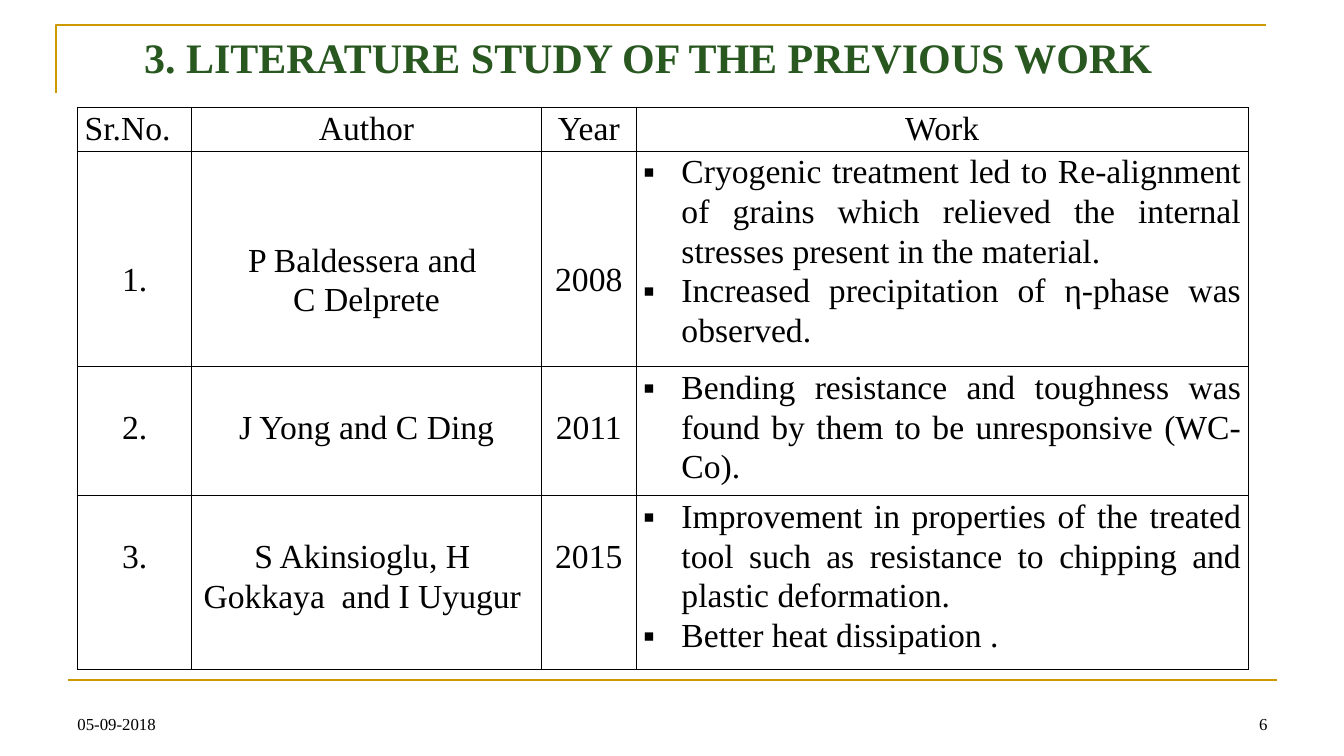
from dataclasses import dataclass

from lxml.etree import SubElement
from pptx import Presentation
from pptx.dml.color import RGBColor
from pptx.enum.shapes import MSO_CONNECTOR
from pptx.enum.text import MSO_ANCHOR, PP_ALIGN
from pptx.oxml.ns import qn
from pptx.util import Inches, Pt


@dataclass(frozen=True)
class Theme:
    font: str = "Times New Roman"
    ink: RGBColor = RGBColor(0, 0, 0)
    title: RGBColor = RGBColor(0x28, 0x57, 0x20)
    gold: RGBColor = RGBColor(0xCC, 0x99, 0x00)
    title_size: int = 30
    body_size: int = 24
    footer_size: int = 12
    rule: float = 1.5
    border: int = 1


THEME = Theme()
COLUMNS = [1.13, 3.47, 0.94, 6.07]
ROWS = [0.43, 2.14, 1.28, 1.72]
LINE_GAP = 0.4
HEADINGS = ["Sr.No.", "Author", "Year", "Work"]
STUDIES = [
    (["1."], ["P Baldessera and ", "C Delprete"], ["2008"], [
        "Cryogenic treatment led to Re-alignment of grains which relieved "
        "the internal stresses present in the material.",
        "Increased precipitation of η-phase was observed.",
    ]),
    (["2."], ["J Yong and C Ding"], ["2011"], [
        "Bending resistance and toughness was found by them to be "
        "unresponsive (WC-Co).",
    ]),
    (["3."], ["S Akinsioglu, H ", "Gokkaya  and I Uyugur "], ["2015"], [
        "Improvement in properties of the treated tool such as resistance "
        "to chipping and plastic deformation.",
        "Better heat dissipation .",
    ]),
]


def add_run(p, text, size, color=THEME.ink, bold=False):
    r = p.add_run()
    r.text = text
    r.font.name = THEME.font
    r.font.size = Pt(size)
    r.font.bold = bold
    r.font.color.rgb = color


def set_bullet(p):
    pPr = p._p.get_or_add_pPr()
    pPr.set("marL", str(Inches(0.38)))
    pPr.set("indent", str(-Inches(0.38)))
    SubElement(pPr, qn("a:buFont"), typeface=THEME.font)
    SubElement(pPr, qn("a:buChar"), char="▪")


def set_borders(cell):
    tcPr = cell._tc.get_or_add_tcPr()
    for side in ("lnL", "lnR", "lnT", "lnB"):
        ln = SubElement(tcPr, qn(f"a:{side}"), w=str(Pt(THEME.border)))
        fill = SubElement(ln, qn("a:solidFill"))
        SubElement(fill, qn("a:srgbClr"), val=str(THEME.ink))


def fill_cell(cell, lines, align, top=0, anchor=MSO_ANCHOR.TOP, bullets=False):
    set_borders(cell)
    cell.fill.background()
    cell.margin_left = cell.margin_right = Inches(0.07)
    cell.margin_top, cell.margin_bottom = Inches(top), 0
    cell.vertical_anchor = anchor
    tf = cell.text_frame
    for i, line in enumerate(lines):
        p = tf.add_paragraph() if i else tf.paragraphs[0]
        p.alignment = align
        p.line_spacing = 1.07
        if bullets:
            set_bullet(p)
        add_run(p, line, THEME.body_size)


def add_rule(slide, x1, y1, x2, y2):
    ends = [Inches(v) for v in (x1, y1, x2, y2)]
    line = slide.shapes.add_connector(MSO_CONNECTOR.STRAIGHT, *ends)
    line.line.color.rgb = THEME.gold
    line.line.width = Pt(THEME.rule)
    SubElement(line._element.spPr, qn("a:effectLst"))


def add_corner(slide, left, top, width, height):
    builder = slide.shapes.build_freeform(Inches(left), Inches(top + height))
    builder.add_line_segments(
        [(Inches(left), Inches(top)), (Inches(left + width), Inches(top))], close=False)
    sp = builder.convert_to_shape()
    sp.shadow.inherit = False
    sp.fill.background()
    sp.line.color.rgb = THEME.gold
    sp.line.width = Pt(THEME.rule)


def add_title(slide, left, top, width, height):
    sp = slide.shapes.title
    sp.left, sp.top, sp.width, sp.height = map(Inches, (left, top, width, height))
    tf = sp.text_frame
    tf.word_wrap = True
    tf.vertical_anchor = MSO_ANCHOR.TOP
    p = tf.paragraphs[0]
    p.alignment = PP_ALIGN.LEFT
    add_run(p, "3. LITERATURE STUDY OF THE PREVIOUS WORK",
            THEME.title_size, THEME.title, bold=True)


def add_studies(slide, left, top):
    box = [Inches(v) for v in (left, top, sum(COLUMNS), sum(ROWS))]
    table = slide.shapes.add_table(len(ROWS), len(COLUMNS), *box).table
    table.horz_banding = False
    for column, width in zip(table.columns, COLUMNS):
        column.width = Inches(width)
    for row, height in zip(table.rows, ROWS):
        row.height = Inches(height)
    for c, heading in enumerate(HEADINGS):
        align = PP_ALIGN.CENTER if c else PP_ALIGN.JUSTIFY
        fill_cell(table.cell(0, c), [heading], align)
    for r, (*facts, work) in enumerate(STUDIES, 1):
        anchor = MSO_ANCHOR.MIDDLE if r == 1 else MSO_ANCHOR.TOP
        for c, lines in enumerate(facts):
            fill_cell(table.cell(r, c), lines, PP_ALIGN.CENTER, LINE_GAP, anchor)
        fill_cell(table.cell(r, len(facts)), work, PP_ALIGN.JUSTIFY, bullets=True)


def add_footer(slide, left, top, width, height):
    part = 3.11
    for x, text, align in ((left, "05-09-2018", PP_ALIGN.LEFT),
                           (left + width - part, "6", PP_ALIGN.RIGHT)):
        sp = slide.shapes.add_textbox(*map(Inches, (x, top, part, height)))
        tf = sp.text_frame
        tf.word_wrap = True
        tf.vertical_anchor = MSO_ANCHOR.BOTTOM
        p = tf.paragraphs[0]
        p.alignment = align
        add_run(p, text, THEME.footer_size)


def main():
    prs = Presentation()
    prs.slide_width, prs.slide_height = Inches(13.33), Inches(7.5)
    slide = prs.slides.add_slide(prs.slide_layouts[5])
    add_corner(slide, 0.56, 0.25, 12, 0.67)
    add_rule(slide, 0.67, 6.75, 12.67, 6.75)
    add_studies(slide, 0.77, 1.07)
    add_title(slide, 1.33, 0.26, 10.71, 0.61)
    add_footer(slide, 0.67, 6.83, 12, 0.5)
    prs.save("out.pptx")


if __name__ == "__main__":
    main()
